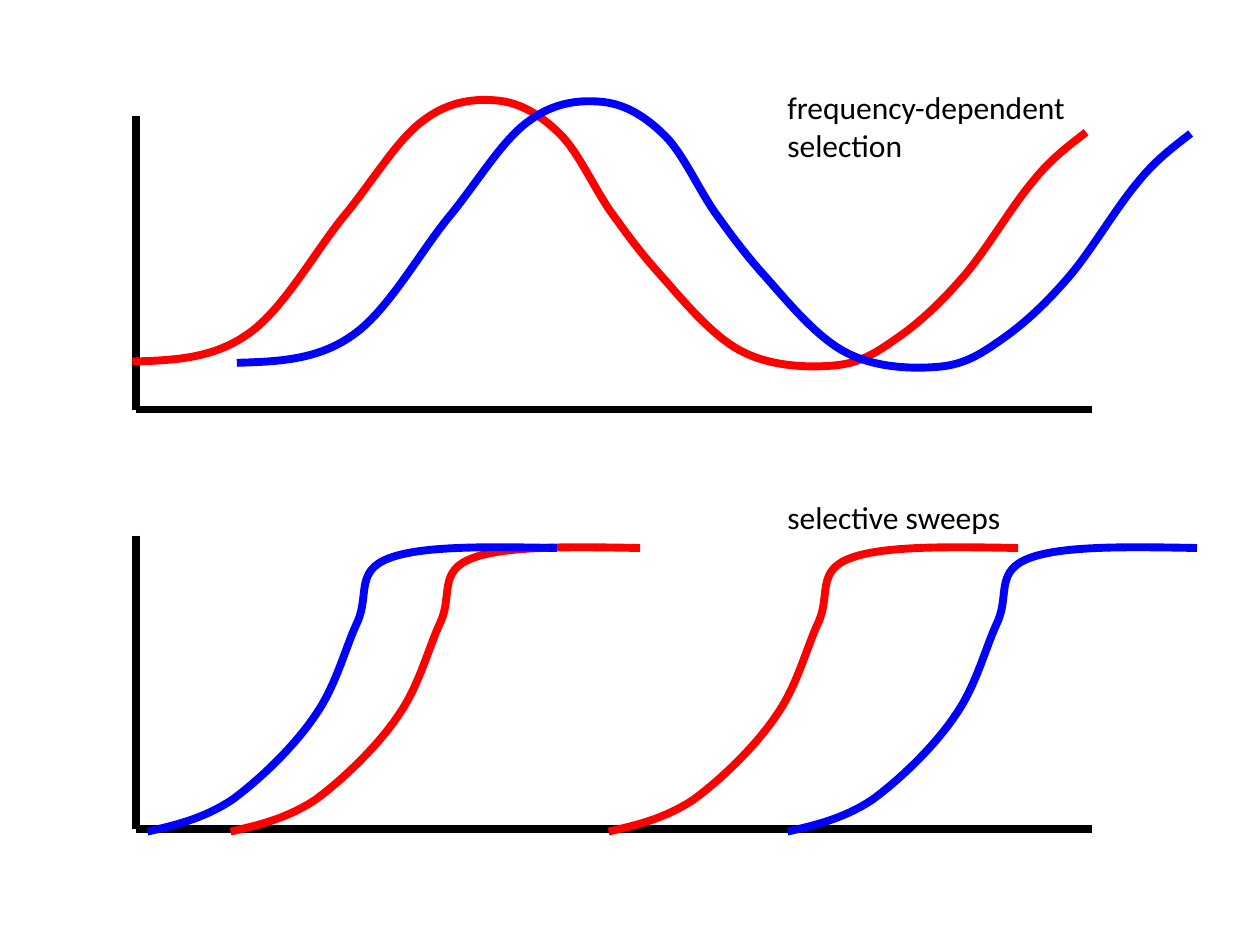
from lxml import etree
from pptx import Presentation
from pptx.dml.color import RGBColor
from pptx.enum.shapes import MSO_CONNECTOR
from pptx.enum.text import MSO_AUTO_SIZE
from pptx.oxml.ns import qn
from pptx.util import Pt

PX = 9144  # EMU per px, 100 px to the inch
BLACK = RGBColor(0, 0, 0)
RED = RGBColor(255, 0, 0)
BLUE = RGBColor(0, 0, 255)
STRAIGHT = MSO_CONNECTOR.STRAIGHT
FIT_SHAPE = MSO_AUTO_SIZE.SHAPE_TO_FIT_TEXT

AXIS_LEFT, AXIS_RIGHT, AXIS_HEIGHT = 108, 867, 233

# Start point, then three Bezier points per segment
CYCLE = [
    (105, 287),
    (137, 286), (169, 285), (197, 265), (226, 245), (252, 196), (276, 168),
    (299, 139), (317, 109), (337, 95), (357, 80), (378, 78), (396, 80),
    (414, 82), (430, 92), (445, 107), (459, 121), (471, 148), (484, 167),
    (497, 185), (507, 199), (524, 218), (541, 237), (565, 267), (589, 279),
    (612, 291), (642, 292), (663, 290), (684, 288), (697, 279), (714, 267),
    (731, 255), (748, 239), (766, 218), (783, 198), (803, 164), (819, 145),
    (834, 126), (848, 116), (862, 105),
]
SWEEP = [
    (0, 660),
    (22, 655), (44, 650), (67, 635), (89, 619), (117, 592), (133, 568),
    (150, 544), (157, 514), (167, 493), (176, 472), (165, 453), (192, 443),
    (218, 433), (272, 434), (325, 435),
]


def write_text(tf, text, size=18, font="Calibri", color=BLACK):
    p = tf.paragraphs[0]
    for i, line in enumerate(text.split("\n")):
        if i:
            p.add_line_break()
        r = p.add_run()
        r.text = line
        r.font.size = Pt(size)
        r.font.name = font
        r.font.color.rgb = color


class Sketch:
    def __init__(self, slide, line_width=4.5):
        self.s = slide
        self.line_width = Pt(line_width)

    def outline(self, sp, color):
        sp.line.color.rgb = color
        sp.line.width = self.line_width

    def axes(self, top):
        group = self.s.shapes.add_group_shape()
        bottom = top + AXIS_HEIGHT
        for x1, y1, x2, y2 in ((AXIS_LEFT, top, AXIS_LEFT, bottom),
                               (AXIS_LEFT, bottom, AXIS_RIGHT, bottom)):
            line = group.shapes.add_connector(
                STRAIGHT, x1 * PX, y1 * PX, x2 * PX, y2 * PX)
            self.outline(line, BLACK)
            etree.SubElement(line._element.spPr, qn("a:effectLst"))

    def curve(self, points, color, dx=0, dy=0):
        start, *rest = [(x + dx, y + dy) for x, y in points]
        builder = self.s.shapes.build_freeform(*start, scale=PX)
        builder.add_line_segments(rest, close=False)
        sp = builder.convert_to_shape()
        sp.shadow.inherit = False
        sp.fill.background()
        self.outline(sp, color)
        # Turn every three straight steps into one Bezier segment
        steps = list(sp._element.iter(qn("a:lnTo")))
        for i in range(0, len(steps), 3):
            bezier = etree.Element(qn("a:cubicBezTo"))
            steps[i].addprevious(bezier)
            for step in steps[i:i + 3]:
                bezier.append(step[0])
                step.getparent().remove(step)

    def label(self, text, x, y, w, h):
        tf = self.s.shapes.add_textbox(x * PX, y * PX, w * PX, h * PX).text_frame
        tf.word_wrap = False
        tf.auto_size = FIT_SHAPE
        write_text(tf, text)


def main():
    prs = Presentation()
    prs.slide_width, prs.slide_height = 1000 * PX, 750 * PX
    sketch = Sketch(prs.slides.add_slide(prs.slide_layouts[6]))

    # Frequency-dependent selection: two cycles out of phase
    sketch.axes(92)
    sketch.curve(CYCLE, RED)
    sketch.curve(CYCLE, BLUE, dx=83, dy=1)

    # Selective sweeps: one curve repeated along the axis
    sketch.axes(425)
    for x, color in ((183, RED), (117, BLUE), (625, BLUE), (483, RED)):
        sketch.curve(SWEEP, color, dx=x)

    # Labels
    sketch.label("frequency-dependent\nselection", 615, 65, 301, 90)
    sketch.label("selective sweeps", 615, 390, 241, 50)

    prs.save("out.pptx")


if __name__ == "__main__":
    main()
